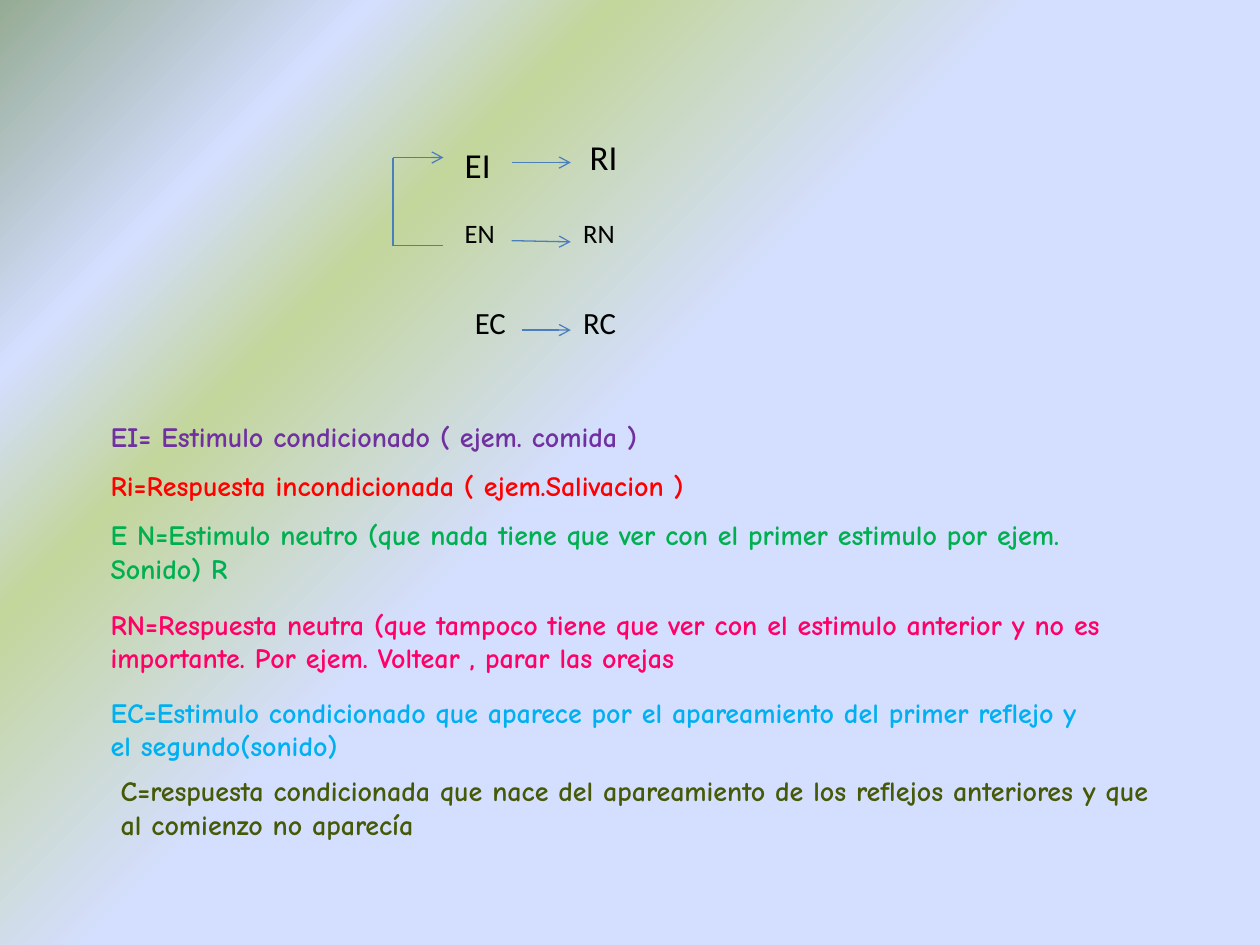
from lxml import etree
from pptx import Presentation
from pptx import util as u
from pptx.dml.color import RGBColor
from pptx.enum import shapes, text
from pptx.oxml.ns import qn

BLACK = RGBColor(0x00, 0x00, 0x00)
BLUE = RGBColor(0x4B, 0x7E, 0xBC)
PURPLE = RGBColor(0x70, 0x30, 0xA0)
RED = RGBColor(0xFF, 0x00, 0x00)
GREEN = RGBColor(0x00, 0xB0, 0x50)
PINK = RGBColor(0xFF, 0x00, 0x66)
SKY = RGBColor(0x00, 0xB0, 0xF0)
OLIVE = RGBColor(0x45, 0x59, 0x07)
PALE = RGBColor(0xD4, 0xDE, 0xFF)
LIME = RGBColor(0xC3, 0xD6, 0x9B)
SAGE = RGBColor(0x96, 0xAB, 0x94)

STOPS = [(53, PALE), (72, LIME), (83, PALE), (100, SAGE)]

# left, top, size, line spacing, text
LABELS = [
    (3.59, 1.09, 20, 1.0, "EI"),
    (4.53, 1.09, 20, 0.8, "RI"),
    (3.59, 1.72, 15.2, 0.8, "EN"),
    (4.53, 1.72, 15.2, 0.8, "RN"),
    (3.67, 2.42, 17.6, 0.8, "EC"),
    (4.53, 2.42, 17.6, 0.8, "RC"),
]

# start x, start y, end x, end y, arrowhead
LINES = [
    (4.06, 1.29, 4.53, 1.29, True),
    (4.06, 1.91, 4.53, 1.92, True),
    (4.14, 2.62, 4.53, 2.62, True),
    (3.52, 1.95, 3.12, 1.95, False),
    (3.12, 1.95, 3.12, 1.25, False),
    (3.12, 1.25, 3.52, 1.25, True),
]

# left, top, width, height, colour, text
TERMS = [
    (0.78, 3.28, 6.74, 0.37, PURPLE,
     "EI= Estimulo condicionado ( ejem. comida )"),
    (0.78, 3.67, 5.87, 0.37, RED,
     "Ri=Respuesta incondicionada ( ejem.Salivacion )"),
    (0.78, 4.06, 7.81, 0.64, GREEN,
     "E N=Estimulo neutro (que nada tiene que ver con el primer estimulo "
     "por ejem. Sonido) R"),
    (0.78, 4.77, 8.91, 0.64, PINK,
     "RN=Respuesta neutra (que tampoco tiene que ver con el estimulo "
     "anterior y no es importante. Por ejem. Voltear , parar las orejas"),
    (0.78, 5.47, 7.89, 0.64, SKY,
     "EC=Estimulo condicionado que aparece por el apareamiento del primer "
     "reflejo y el segundo(sonido)"),
    (0.86, 6.09, 8.59, 0.64, OLIVE,
     "C=respuesta condicionada que nace del apareamiento de los reflejos "
     "anteriores y que al comienzo no aparecía"),
]


def paint_back(slide):
    """Fill the background with rings centred on the lower right corner."""
    slide.background.fill.gradient()
    grad = slide.element.find(".//" + qn("a:gradFill"))
    for child in list(grad):
        grad.remove(child)
    stops = etree.SubElement(grad, qn("a:gsLst"))
    for place, color in STOPS:
        stop = etree.SubElement(stops, qn("a:gs"), pos=str(place * 1000))
        etree.SubElement(stop, qn("a:srgbClr"), val=str(color))
    ring = etree.SubElement(grad, qn("a:path"), path="circle")
    etree.SubElement(ring, qn("a:fillToRect"), l="100000", t="100000")


def add_text(slide, box, words, size, face, color, bold=False):
    """Add a wrapped one-paragraph text box and return its paragraph."""
    frame = slide.shapes.add_textbox(*map(u.Inches, box)).text_frame
    frame.word_wrap = True
    para = frame.paragraphs[0]
    run = para.add_run()
    run.text = words
    run.font.size = u.Pt(size)
    run.font.name = face
    run.font.bold = bold
    run.font.color.rgb = color
    return para


def add_label(slide, left, top, size, space, words):
    para = add_text(slide, (left, top, 0.47, 0.39), words, size,
                    "Calibri", BLACK)
    para.line_spacing = space
    para.space_before = u.Pt(size * 0.2)
    if words == "RI":
        para.alignment = text.PP_ALIGN.RIGHT
    props = para._p.get_or_add_pPr()
    props.set("marL", str(u.Inches(0.38)))
    props.set("indent", str(u.Inches(-0.38)))


def add_line(slide, x1, y1, x2, y2, arrow):
    line = slide.shapes.add_connector(
        shapes.MSO_CONNECTOR.STRAIGHT, *map(u.Inches, (x1, y1, x2, y2)))
    line.line.color.rgb = BLUE
    line.line.width = u.Pt(0.75)
    if arrow:
        etree.SubElement(line.line._get_or_add_ln(), qn("a:tailEnd"),
                         type="arrow")
    etree.SubElement(line.element.spPr, qn("a:effectLst"))


def add_term(slide, left, top, width, height, color, words):
    para = add_text(slide, (left, top, width, height), words, 16,
                    "Comic Neue", color, bold=True)
    return para


def main():
    deck = Presentation()
    deck.slide_width = u.Inches(10)
    deck.slide_height = u.Inches(7.5)
    slide = deck.slides.add_slide(deck.slide_layouts[6])
    paint_back(slide)
    for label in LABELS:
        add_label(slide, *label)
    for line in LINES:
        add_line(slide, *line)
    for term in TERMS:
        add_term(slide, *term)
    deck.save("out.pptx")


if __name__ == "__main__":
    main()
